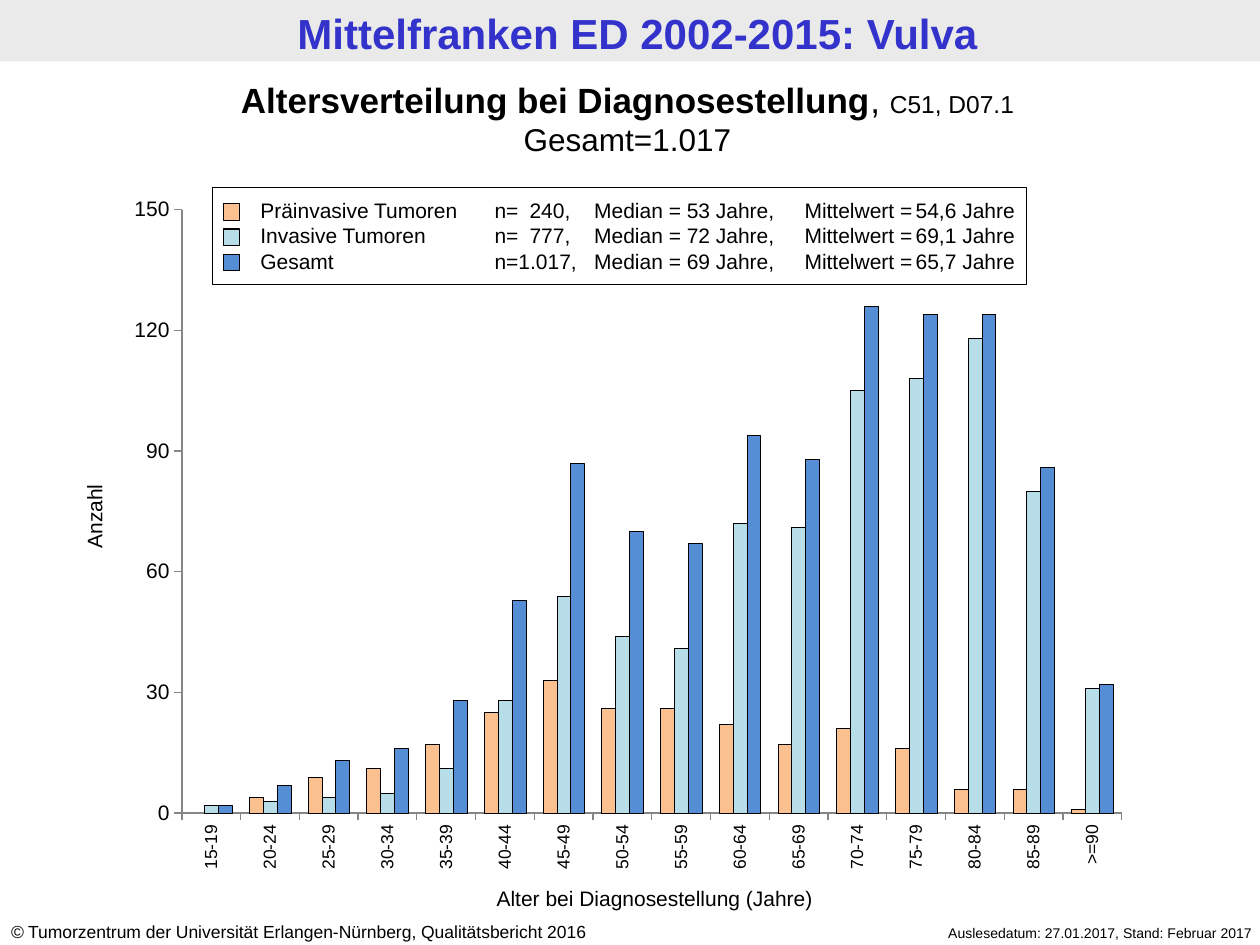
"""Build the slide on age at diagnosis with its column chart."""
from lxml import etree
from pptx import Presentation
from pptx import util as u
from pptx.chart import data as cd
from pptx.dml.color import RGBColor
from pptx.enum import chart as ce, shapes, text
from pptx.oxml.ns import qn

BLACK, GREY = "000000", "868686"
LEFT, MID, RIGHT = text.PP_ALIGN.LEFT, text.PP_ALIGN.CENTER, text.PP_ALIGN.RIGHT
AGES = [f"{a}-{a + 4}" for a in range(15, 90, 5)] + [">=90"]
GROUPS = [
    ("Präinvasive Tumoren", "FAC090", "240", "53", "54,6",
     (None, 4, 9, 11, 17, 25, 33, 26, 26, 22, 17, 21, 16, 6, 6, 1)),
    ("Invasive Tumoren", "B7DEE8", "777", "72", "69,1",
     (2, 3, 4, 5, 11, 28, 54, 44, 41, 72, 71, 105, 108, 118, 80, 31)),
    ("Gesamt", "558ED5", "1.017", "69", "65,7",
     (2, 7, 13, 16, 28, 53, 87, 70, 67, 94, 88, 126, 124, 124, 86, 32)),
]
TABS = [(4.72, "l"), (6.25, "r"), (6.73, "l"), (10.97, "l"), (13.21, "l")]
KEYS = [[(f"{name}\tn=\t{num},\tMedian = {med} Jahre,\tMittelwert =\t{mean} Jahre", {})]
        for name, _, num, med, mean, _ in GROUPS]
HEAD = [
    [("Altersverteilung bei Diagnosestellung", {"size": 20, "bold": True}),
     (", ", {"size": 20}), ("C51, D07.1", {"size": 14})],
    [("Gesamt=1.017", {"size": 18})],
]
NOTES = [
    ((0.15, 0.03, 25.4, 1.24), MID, 0,
     [[("Mittelfranken ED 2002-2015: Vulva", {"size": 24, "bold": True, "color": "3333CC"})]]),
    ((-0.03, 18.44, 13.31, 0.69), LEFT, 0,
     [[("©", {"size": 10, "italic": True}),
       (" Tumorzentrum der Universität Erlangen-Nürnberg, Qualitätsbericht 2016", {"size": 10})]]),
    ((16.89, 18.52, 8.61, 0.61), RIGHT, 0,
     [[("Auslesedatum: 27.01.2017, Stand: Februar 2017", {"size": 8})]]),
    ((9.3, 17.73, 7.8, 0.76), MID, 0, [[("Alter bei Diagnosestellung (Jahre)", {})]]),
    ((-1.42, 10.03, 6.63, 0.76), MID, 270, [[("Anzahl", {})]]),
    ((5, 3.86, 16.31, 1.8), LEFT, 0, KEYS),
]


def rgb(code):
    return RGBColor.from_string(code)


def cm(box):
    return [u.Cm(n) for n in box]


def style(font, form):
    form = {"size": 12, "name": "Arial", "bold": False, "italic": False, "color": BLACK} | form
    font.color.rgb = rgb(form.pop("color"))
    form["size"] = u.Pt(form["size"])
    for key, val in form.items():
        setattr(font, key, val)


def write(shape, paras, align):
    frame = shape.text_frame
    frame.word_wrap = True
    frame.auto_size = text.MSO_AUTO_SIZE.NONE
    frame.vertical_anchor = text.MSO_ANCHOR.TOP
    for i, runs in enumerate(paras):
        para = frame.add_paragraph() if i else frame.paragraphs[0]
        para.alignment = align
        para.space_before = u.Pt(0)
        if paras is KEYS:
            tabs = etree.SubElement(para._p.get_or_add_pPr(), qn("a:tabLst"))
            for pos, side in TABS:
                etree.SubElement(tabs, qn("a:tab"), pos=str(u.Cm(pos)), algn=side)
        for words, form in runs:
            run = para.add_run()
            run.text = words
            style(run.font, form)


def rect(slide, box, fill=None, line=None):
    shape = slide.shapes.add_shape(shapes.MSO_SHAPE.RECTANGLE, *cm(box))
    shape.shadow.inherit = False
    paint(shape, fill, line, 0.75)


def paint(part, fill, line, width):
    if fill:
        part.fill.solid()
        part.fill.fore_color.rgb = rgb(fill)
    else:
        part.fill.background()
    if line:
        part.line.color.rgb = rgb(line)
        part.line.width = u.Pt(width)
    else:
        part.line.fill.background()


def plot(slide):
    data = cd.CategoryChartData()
    data.categories = AGES
    for name, *_, vals in GROUPS:
        data.add_series(name, vals)
    kind = ce.XL_CHART_TYPE.COLUMN_CLUSTERED
    chart = slide.shapes.add_chart(kind, *cm((2.31, 3.73, 20.73, 14.1)), data).chart
    chart.has_legend = chart.has_title = False
    style(chart.font, {"size": 18, "name": "Calibri"})
    bars = chart.plots[0]
    bars.gap_width, bars.overlap, bars.vary_by_categories = 124, 0, False
    for row, group in zip(bars.series, GROUPS):
        row.invert_if_negative = False
        paint(row.format, group[1], BLACK, 0.25)
    for axis, size in ((chart.category_axis, 10), (chart.value_axis, 12)):
        axis.has_major_gridlines = False
        axis.major_tick_mark = ce.XL_TICK_MARK.OUTSIDE
        axis.minor_tick_mark = ce.XL_TICK_MARK.NONE
        axis.format.line.color.rgb = rgb(GREY)
        axis.format.line.width = u.Pt(0.75)
        style(axis.tick_labels.font, {"size": size})
    for key, val in {"minimum_scale": 0, "maximum_scale": 150, "major_unit": 30}.items():
        setattr(chart.value_axis, key, val)
    body = chart.category_axis._element.find(".//" + qn("a:bodyPr"))
    body.set("rot", "-5400000")
    body.set("vert", "horz")
    area = chart._chartSpace.chart.plotArea
    for old in area.findall(qn("c:layout")):
        area.remove(old)
    layout = etree.Element(qn("c:layout"))
    area.insert(0, layout)
    manual = etree.SubElement(layout, qn("c:manualLayout"))
    for tag, val in {"layoutTarget": "inner", "xMode": "edge", "yMode": "edge",
                     "x": "0.0655", "y": "0.0355", "w": "0.914", "h": "0.8625"}.items():
        etree.SubElement(manual, qn("c:" + tag), val=val)


def main():
    deck = Presentation()
    deck.slide_width, deck.slide_height = u.Cm(25.4), u.Cm(19.05)
    slide = deck.slides.add_slide(deck.slide_layouts[5])
    rect(slide, (0, 0, 25.4, 1.24), "EAEAEA")
    title = slide.shapes.title
    title.left, title.top, title.width, title.height = cm((-0.1, 1.45, 25.5, 1.88))
    write(title, HEAD, MID)
    plot(slide)
    for box, align, turn, paras in NOTES:
        note = slide.shapes.add_textbox(*cm(box))
        note.rotation = turn
        write(note, paras, align)
    rect(slide, (4.29, 3.78, 16.41, 1.96), line=BLACK)
    for i, group in enumerate(GROUPS):
        rect(slide, (4.5, 4.11 + 0.51 * i, 0.33, 0.33), group[1], BLACK)
    deck.save("out.pptx")


if __name__ == "__main__":
    main()
